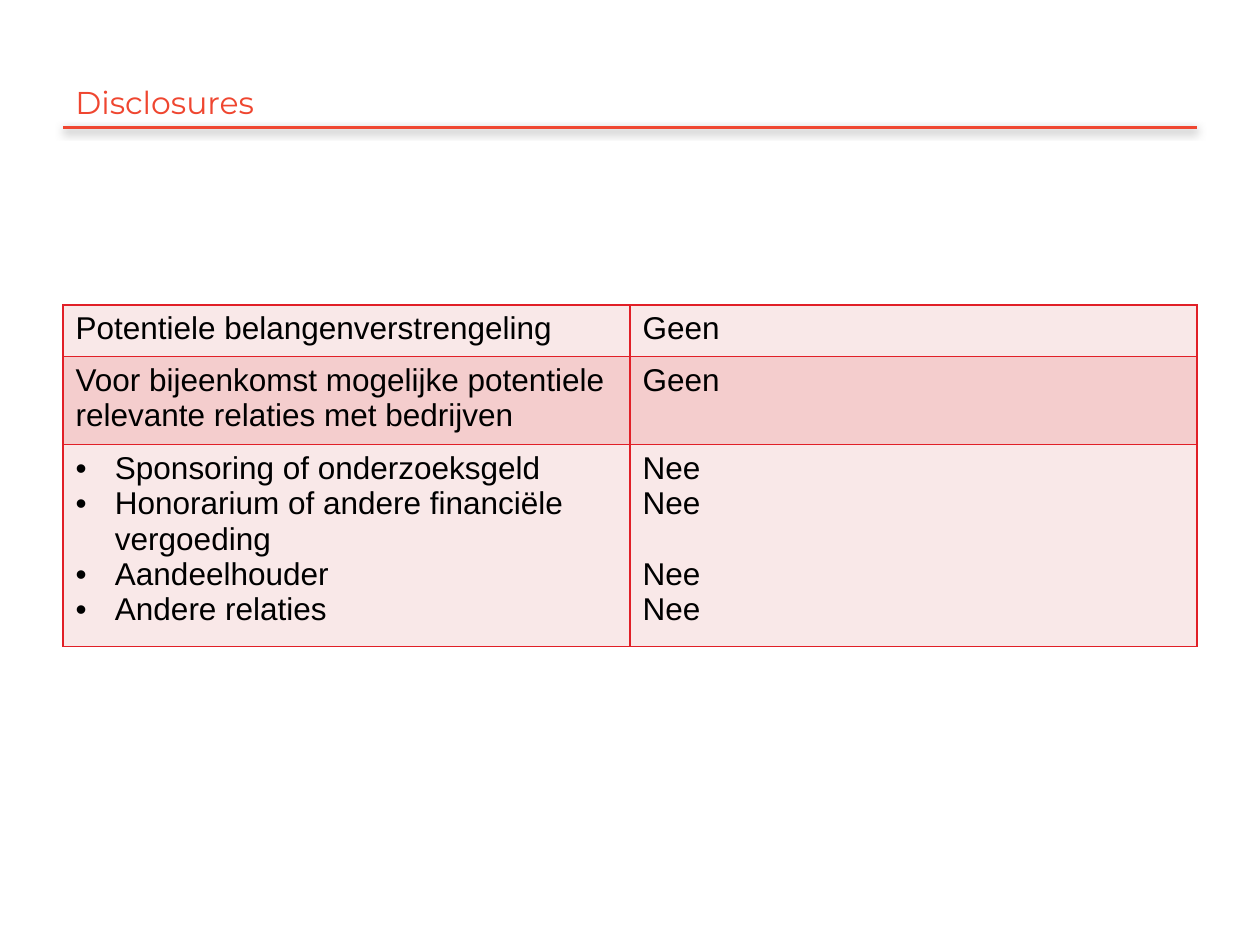
from lxml.etree import SubElement
from pptx import Presentation
from pptx.dml.color import RGBColor
from pptx.enum.shapes import MSO_CONNECTOR
from pptx.enum.text import MSO_ANCHOR
from pptx.oxml import parse_xml
from pptx.oxml.ns import nsdecls, qn
from pptx.util import Pt

ORANGE = RGBColor(0xEF, 0x46, 0x30)
RED = RGBColor(0xE1, 0x1F, 0x27)
PALE = RGBColor(0xF9, 0xE8, 0xE8)
PINK = RGBColor(0xF4, 0xCD, 0xCD)
BLACK = RGBColor(0, 0, 0)

LEFT, WIDTH = 36, 648
INDENT = 22.5
LINE = 20  # height of one line of text

# Each cell is a list of (text, bullet, space before)
ROWS = [
    (29.5, PALE, [("Potentiele belangenverstrengeling", False, 0)],
     [("Geen", False, 0)]),
    (47.2, PINK, [("Voor bijeenkomst mogelijke potentiele relevante "
                   "relaties met bedrijven", False, 0)],
     [("Geen", False, 0)]),
    (108.3, PALE, [("Sponsoring of onderzoeksgeld", True, 0),
                   ("Honorarium of andere financiële vergoeding", True, 0),
                   ("Aandeelhouder", True, 0),
                   ("Andere relaties", True, 0)],
     [("Nee", False, 0), ("Nee", False, 0),
      ("Nee", False, LINE), ("Nee", False, 0)]),
]


class Deck:
    size = 18
    head = "Montserrat"
    body = "Arial"

    def __init__(self, slide):
        self.slide = slide

    def run(self, para, text, name, color):
        run = para.add_run()
        run.text = text
        font = run.font
        font.name, font.size = name, Pt(self.size)
        font.color.rgb = color

    def rule(self, x, y, width):
        line = self.slide.shapes.add_connector(
            MSO_CONNECTOR.STRAIGHT, Pt(x), Pt(y), Pt(x + width), Pt(y))
        line.line.color.rgb = ORANGE
        line.line.width = Pt(2)
        # Soft shadow below the line
        line._element.spPr.append(parse_xml(
            f'<a:effectLst {nsdecls("a")}><a:outerShdw blurRad="{Pt(5)}" '
            f'dist="{Pt(1.6)}" dir="5400000" rotWithShape="0">'
            '<a:srgbClr val="000000"><a:alpha val="38000"/></a:srgbClr>'
            '</a:outerShdw></a:effectLst>'))

    def title(self, text, x, y, width, height):
        box = self.slide.shapes.add_textbox(
            Pt(x), Pt(y), Pt(width), Pt(height))
        frame = box.text_frame
        frame.word_wrap = True
        frame.vertical_anchor = MSO_ANCHOR.BOTTOM
        self.run(frame.paragraphs[0], text, self.head, ORANGE)

    def bullet(self, para):
        props = para._p.get_or_add_pPr()
        props.set("marL", str(Pt(INDENT)))
        props.set("indent", str(-Pt(INDENT)))
        SubElement(props, qn("a:buFont")).set("typeface", self.body)
        SubElement(props, qn("a:buChar")).set("char", "•")

    def border(self, cell):
        props = cell._tc.get_or_add_tcPr()
        for spot, side in enumerate("LRTB"):
            props.insert(spot, parse_xml(
                f'<a:ln{side} {nsdecls("a")} w="{Pt(1)}"><a:solidFill>'
                f'<a:srgbClr val="{RED}"/></a:solidFill></a:ln{side}>'))

    def cell(self, cell, items, fill):
        cell.fill.solid()
        cell.fill.fore_color.rgb = fill
        self.border(cell)
        frame = cell.text_frame
        for index, (text, dot, gap) in enumerate(items):
            para = frame.add_paragraph() if index else frame.paragraphs[0]
            if gap:
                para.space_before = Pt(gap)
            if dot:
                self.bullet(para)
            self.run(para, text, self.body, BLACK)

    def table(self, rows, x, y, width):
        high = sum(row[0] for row in rows)
        table = self.slide.shapes.add_table(
            len(rows), 2, Pt(x), Pt(y), Pt(width), Pt(high)).table
        table.first_row = table.horz_banding = False
        for index, (height, fill, *cells) in enumerate(rows):
            table.rows[index].height = Pt(height)
            for col, items in enumerate(cells):
                self.cell(table.cell(index, col), items, fill)


def main():
    show = Presentation()
    show.slide_width, show.slide_height = Pt(720), Pt(540)
    deck = Deck(show.slides.add_slide(show.slide_layouts[6]))

    # Heading with its rule
    deck.rule(LEFT, 72.8, WIDTH)
    deck.title("Disclosures", LEFT, 21.6, WIDTH, 51.2)

    # Table of interests
    deck.table(ROWS, LEFT, 174.2, WIDTH)

    show.save("out.pptx")


if __name__ == "__main__":
    main()
